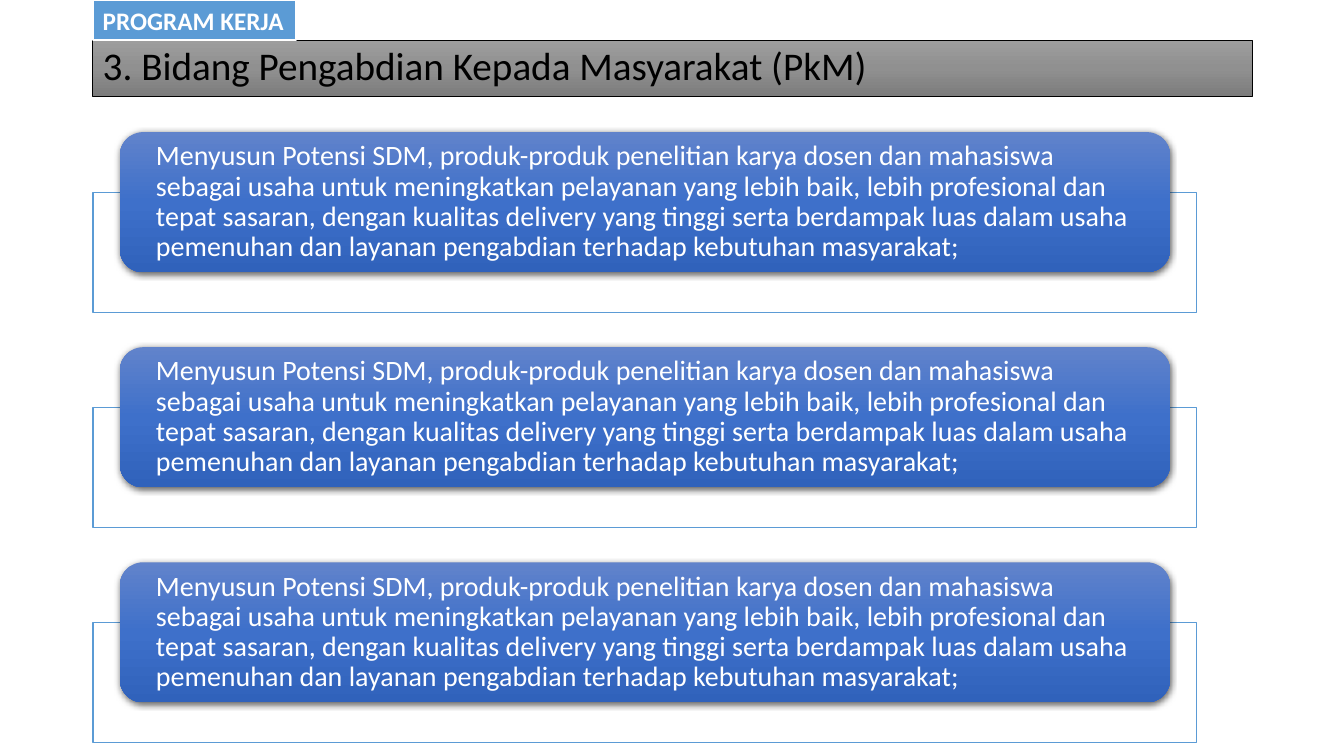
from dataclasses import dataclass

from lxml import etree
from pptx import Presentation
from pptx.dml.color import RGBColor
from pptx.enum.shapes import MSO_SHAPE
from pptx.enum.text import MSO_ANCHOR, MSO_AUTO_SIZE, PP_ALIGN
from pptx.oxml.ns import qn
from pptx.shapes.autoshape import Shape
from pptx.slide import Slide
from pptx.util import Cm, Pt

RECT = MSO_SHAPE.RECTANGLE
ROUNDED = MSO_SHAPE.ROUNDED_RECTANGLE
MIDDLE = MSO_ANCHOR.MIDDLE
LEFT = PP_ALIGN.LEFT
GROW = MSO_AUTO_SIZE.SHAPE_TO_FIT_TEXT

FONT = "Calibri"
COLORS = {
    "black": "000000",
    "white": "FFFFFF",
    "accent": "5B9BD5",
    "grey_top": "9D9D9D",
    "grey_mid": "909090",
    "grey_end": "7C7C7C",
    "blue_top": "6183CB",
    "blue_mid": "3E70CA",
    "blue_end": "3062BB",
}
GREY = ("grey_top", "grey_mid", "grey_end")
BLUE = ("blue_top", "blue_mid", "blue_end")

MARGIN = 2.34
FIRST_CARD_TOP = 3.33
CARD_PITCH = 5.42

POTENSI_SDM = (
    "Menyusun Potensi SDM, produk-produk penelitian karya dosen dan mahasiswa "
    "sebagai usaha untuk meningkatkan pelayanan yang lebih baik, lebih profesional "
    "dan tepat sasaran, dengan kualitas delivery yang tinggi serta berdampak luas "
    "dalam usaha pemenuhan dan layanan pengabdian terhadap kebutuhan masyarakat;"
)


@dataclass
class Program:
    text: str
    top: float


def rgb(name: str) -> RGBColor:
    return RGBColor.from_string(COLORS[name])


def add_box(s: Slide, kind: int, left: float, top: float, width: float,
            height: float, line: str = "", line_width: float = 1) -> Shape:
    """Add an unfilled shape, sized in centimetres, outlined if a line is named."""
    sp = s.shapes.add_shape(kind, Cm(left), Cm(top), Cm(width), Cm(height))
    sp.shadow.inherit = False
    if line:
        sp.line.color.rgb = rgb(line)
        sp.line.width = Pt(line_width)
    else:
        sp.line.fill.background()
    return sp


def fill_solid(sp: Shape, color: str) -> None:
    sp.fill.solid()
    sp.fill.fore_color.rgb = rgb(color)


def fill_gradient(sp: Shape, names: tuple[str, ...]) -> None:
    """Fill from top to bottom with evenly spaced stops."""
    sp.fill.gradient()
    sp.fill.gradient_angle = 270
    stops = sp.element.spPr.find(".//" + qn("a:gsLst"))
    for stop in list(stops):
        stops.remove(stop)
    for i, name in enumerate(names):
        pos = 100000 * i // (len(names) - 1)
        stop = etree.SubElement(stops, qn("a:gs"), pos=str(pos))
        etree.SubElement(stop, qn("a:srgbClr"), val=COLORS[name])


def set_alpha(sp: Shape, percent: int) -> None:
    color = sp.element.spPr.find(qn("a:solidFill")).find(qn("a:srgbClr"))
    etree.SubElement(color, qn("a:alpha"), val=str(percent * 1000))


def add_shadow(sp: Shape) -> None:
    effects = sp.element.spPr.find(qn("a:effectLst"))
    shadow = etree.SubElement(
        effects, qn("a:outerShdw"), blurRad=str(Pt(4.5)), dist=str(Pt(1.5)),
        dir="5400000", algn="ctr", rotWithShape="0")
    color = etree.SubElement(shadow, qn("a:srgbClr"), val=COLORS["black"])
    etree.SubElement(color, qn("a:alpha"), val="63000")


def write(sp: Shape, text: str, size: float, color: str,
          bold: bool = False, spacing: float = 0.9) -> None:
    tf = sp.text_frame
    tf.word_wrap = True
    tf.vertical_anchor = MIDDLE
    p = tf.paragraphs[0]
    p.alignment = LEFT
    p.line_spacing = spacing
    r = p.add_run()
    r.text = text
    r.font.name = FONT
    r.font.size = Pt(size)
    r.font.bold = bold
    r.font.color.rgb = rgb(color)


def add_heading(s: Slide) -> None:
    title = add_box(s, RECT, MARGIN, 1.02, 29.21, 1.4, "black", 0.5)
    fill_gradient(title, GREY)
    write(title, "3. Bidang Pengabdian Kepada Masyarakat (PkM)", 28, "black")

    tag = add_box(s, RECT, MARGIN, 0, 5.13, 1.02, "white", 1.5)
    fill_solid(tag, "accent")
    write(tag, "PROGRAM KERJA", 18, "white", bold=True, spacing=1.0)
    tag.text_frame.word_wrap = False
    tag.text_frame.auto_size = GROW


def add_program(s: Slide, program: Program) -> None:
    frame = add_box(s, RECT, MARGIN, program.top + 1.52, 27.81, 3.02, "accent")
    fill_solid(frame, "white")
    set_alpha(frame, 90)

    card = add_box(s, ROUNDED, 3.02, program.top, 26.47, 3.53)
    fill_gradient(card, BLUE)
    add_shadow(card)
    tf = card.text_frame
    tf.margin_left = tf.margin_right = Cm(0.74)
    tf.margin_top = tf.margin_bottom = 0
    write(card, program.text, 20, "white")


def main() -> None:
    prs = Presentation()
    prs.slide_width, prs.slide_height = Cm(33.87), Cm(19.05)
    s = prs.slides.add_slide(prs.slide_layouts[6])
    add_heading(s)
    for i, text in enumerate([POTENSI_SDM] * 3):
        add_program(s, Program(text, FIRST_CARD_TOP + i * CARD_PITCH))
    prs.save("out.pptx")


if __name__ == "__main__":
    main()
